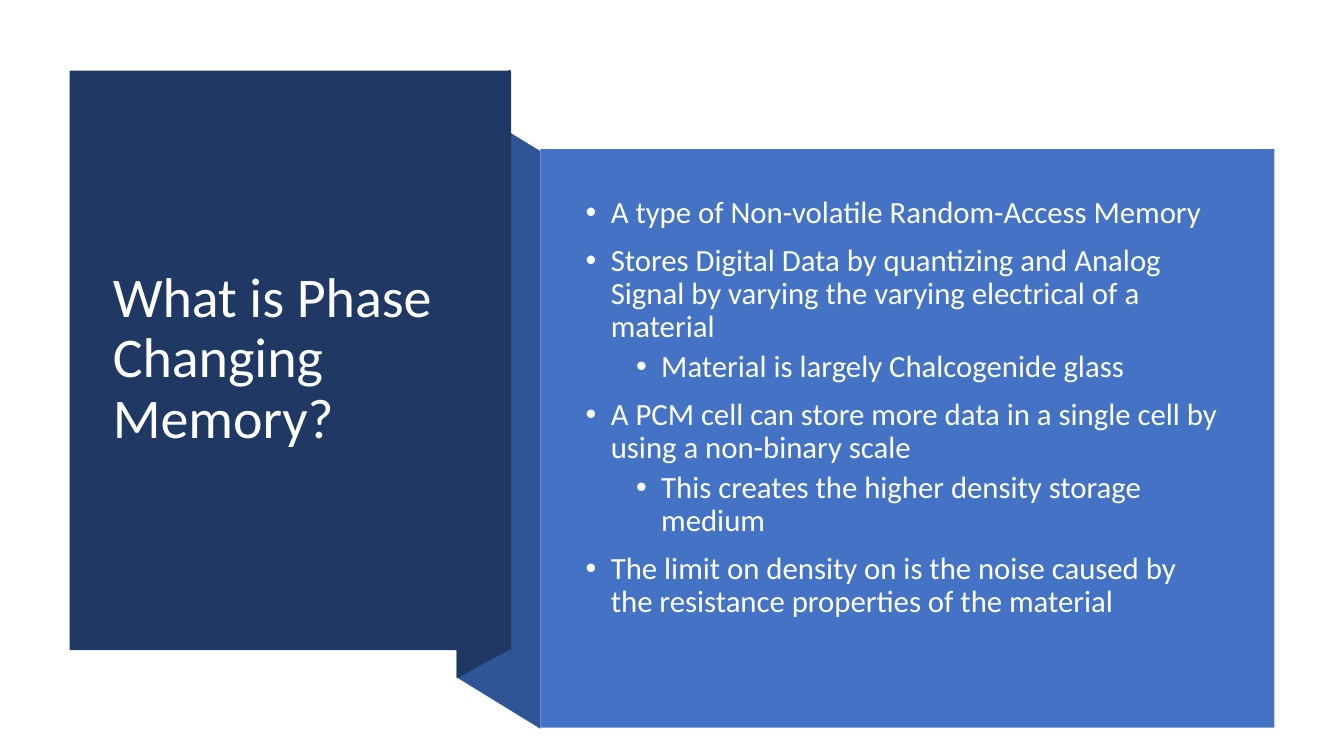
from pptx import Presentation
from pptx.dml.color import RGBColor
from pptx.enum.shapes import MSO_SHAPE
from pptx.enum.text import MSO_ANCHOR
from pptx.oxml.xmlchemy import OxmlElement
from pptx.util import Pt

PX = 9144  # 100 px to the inch
RECTANGLE = MSO_SHAPE.RECTANGLE
MIDDLE = MSO_ANCHOR.MIDDLE

FONT = "Calibri"
NAVY, FOLD_BLUE, PANEL_BLUE = "203864", "2F5597", "4472C4"
TITLE_WHITE, BODY_WHITE = "FFFFFF", "FEFFFF"

TITLE = "What is Phase Changing Memory?"
BULLETS = [
    (0, "A type of Non-volatile Random-Access Memory"),
    (0, "Stores Digital Data by quantizing and Analog Signal by varying "
        "the varying electrical of a material"),
    (1, "Material is largely Chalcogenide glass"),
    (0, "A PCM cell can store more data in a single cell by using a "
        "non-binary scale"),
    (1, "This creates the higher density storage medium"),
    (0, "The limit on density on is the noise caused by the resistance "
        "properties of the material"),
]


def color(hex_string):
    return RGBColor.from_string(hex_string)


def paint(shape, fill):
    shape.shadow.inherit = False
    shape.fill.solid()
    shape.fill.fore_color.rgb = color(fill)
    shape.line.fill.background()


def add_panel(slide, left, top, width, height, fill):
    shape = slide.shapes.add_shape(
        RECTANGLE, left * PX, top * PX, width * PX, height * PX)
    paint(shape, fill)


def add_fold(slide, points, fill):
    builder = slide.shapes.build_freeform(*points[0], scale=PX)
    builder.add_line_segments(points[1:], close=True)
    paint(builder.convert_to_shape(), fill)


def add_text_frame(slide, left, top, width, height):
    box = slide.shapes.add_textbox(
        left * PX, top * PX, width * PX, height * PX)
    text_frame = box.text_frame
    text_frame.word_wrap = True
    text_frame.vertical_anchor = MIDDLE
    return text_frame


def write_paragraph(paragraph, text, size, font_color):
    paragraph.text = text
    paragraph.line_spacing = 0.9
    font = paragraph.runs[0].font
    font.name = FONT
    font.size = Pt(size)
    font.color.rgb = color(font_color)


def add_bullet(paragraph, level):
    paragraph.level = level
    paragraph.space_before = Pt(5 if level else 10)
    properties = paragraph._p.get_or_add_pPr()
    properties.set("marL", str((25 + 50 * level) * PX))
    properties.set("indent", str(-25 * PX))
    bullet_font = OxmlElement("a:buFont")
    bullet_font.set("typeface", "Arial")
    bullet = OxmlElement("a:buChar")
    bullet.set("char", "•")
    properties.extend([bullet_font, bullet])


def add_bullet_list(slide, left, top, width, height, bullets):
    text_frame = add_text_frame(slide, left, top, width, height)
    for index, (level, text) in enumerate(bullets):
        paragraph = text_frame.add_paragraph() if index else text_frame.paragraphs[0]
        write_paragraph(paragraph, text, 22, BODY_WHITE)
        add_bullet(paragraph, level)


def main():
    presentation = Presentation()
    presentation.slide_width = 1333 * PX
    presentation.slide_height = 750 * PX
    slide = presentation.slides.add_slide(presentation.slide_layouts[6])

    # Folded ribbon between the two panels
    add_fold(slide, [(536, 723), (453, 672), (453, 99), (536, 150)], FOLD_BLUE)
    add_fold(slide, [(506, 644), (453, 673), (453, 98), (506, 69)], NAVY)

    # Title panel
    add_panel(slide, 69, 70, 438, 575, NAVY)
    title_frame = add_text_frame(slide, 102, 107, 371, 499)
    write_paragraph(title_frame.paragraphs[0], TITLE, 40, TITLE_WHITE)

    # Bullet panel
    add_panel(slide, 536, 148, 728, 574, PANEL_BLUE)
    add_bullet_list(slide, 571, 188, 651, 434, BULLETS)

    presentation.save("out.pptx")


if __name__ == "__main__":
    main()
